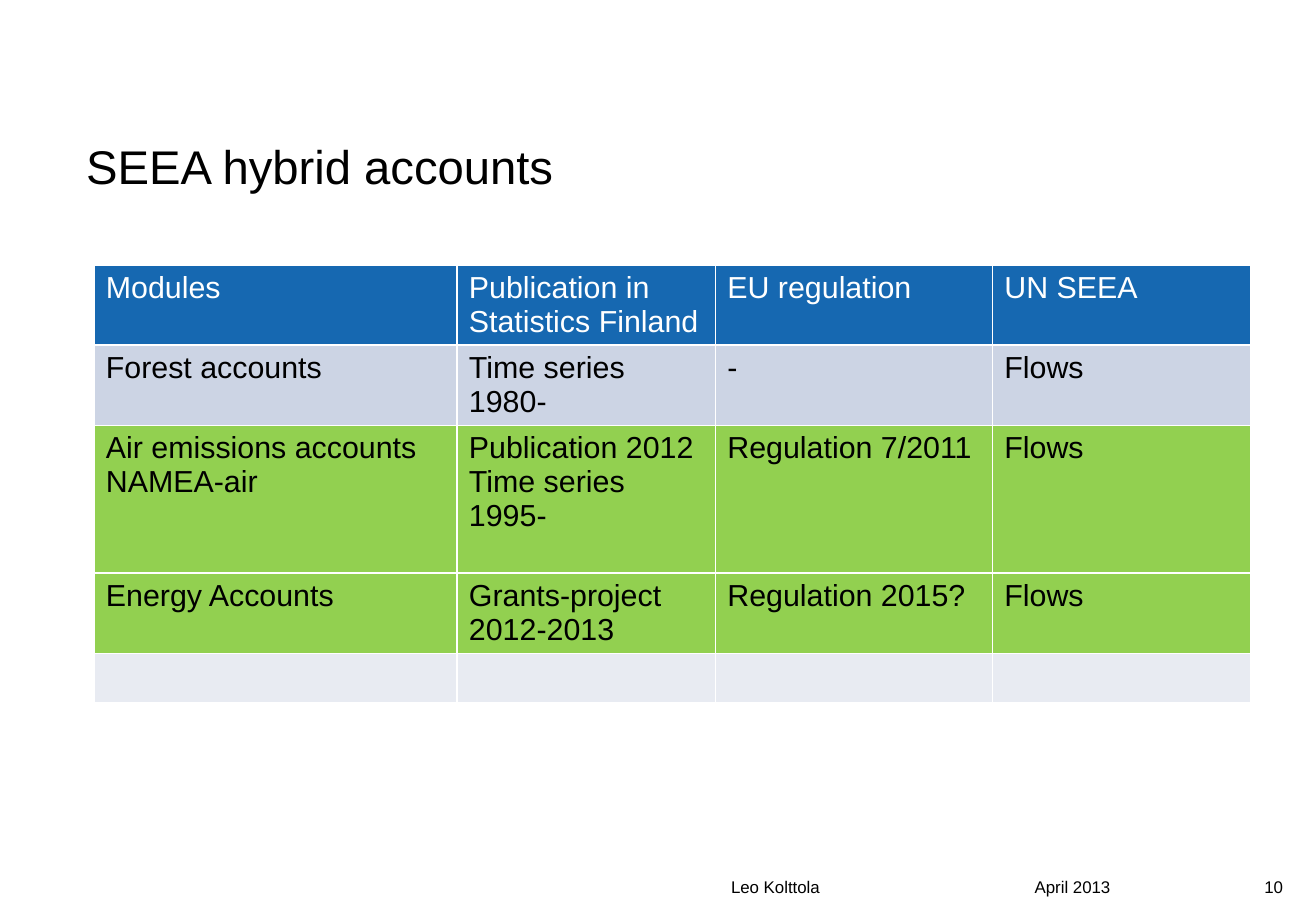
from dataclasses import dataclass

from lxml import etree
from pptx import Presentation
from pptx.dml.color import RGBColor
from pptx.enum.text import MSO_ANCHOR, PP_ALIGN
from pptx.oxml.ns import qn
from pptx.slide import Slide
from pptx.table import _Cell
from pptx.text.text import TextFrame
from pptx.util import Pt

LEFT = PP_ALIGN.LEFT
RIGHT = PP_ALIGN.RIGHT
TOP = MSO_ANCHOR.TOP
MIDDLE = MSO_ANCHOR.MIDDLE
TITLE_ONLY = 5


@dataclass(frozen=True)
class Theme:
    font: str = "Arial"
    title_size: float = 28
    table_size: float = 18
    footer_size: float = 10
    black: str = "000000"
    white: str = "FFFFFF"
    blue: str = "1668B1"
    grey: str = "CCD4E4"
    green: str = "92D050"
    pale: str = "E8EBF2"
    border: float = 1


@dataclass(frozen=True)
class Row:
    height: float
    fill: str
    color: str
    texts: tuple[str, str, str, str]


@dataclass(frozen=True)
class Footer:
    text: str
    left: float
    width: float
    align: PP_ALIGN = LEFT


THEME = Theme()
COLUMN_WIDTHS = (215.2, 153.2, 164.2, 153.2)
ROWS = (
    Row(47.5, THEME.blue, THEME.white,
        ("Modules", "Publication in Statistics Finland", "EU regulation", "UN SEEA")),
    Row(47.5, THEME.grey, THEME.black,
        ("Forest accounts", "Time series 1980-", "-", "Flows")),
    Row(87.7, THEME.green, THEME.black,
        ("Air emissions accounts \vNAMEA-air", "Publication 2012\nTime series 1995-",
         "Regulation 7/2011", "Flows")),
    Row(47.5, THEME.green, THEME.black,
        ("Energy Accounts", "Grants-project 2012-2013", "Regulation 2015?", "Flows")),
    Row(29.2, THEME.pale, THEME.black, ("", "", "", "")),
)
FOOTERS = (
    Footer("Leo Kolttola", 426.2, 174.2),
    Footer("April 2013", 606.2, 120.2),
    Footer("10", 724.3, 43.2, RIGHT),
)


def write(frame: TextFrame, text: str, size: float, color: str,
          align: PP_ALIGN = LEFT) -> None:
    frame.text = text
    frame.word_wrap = True
    for para in frame.paragraphs:
        para.alignment = align
        para.font.size = Pt(size)
        for span in para.runs:
            span.font.name = THEME.font
            span.font.size = Pt(size)
            span.font.bold = False
            span.font.color.rgb = RGBColor.from_string(color)


def add_borders(cell: _Cell) -> None:
    properties = cell._tc.get_or_add_tcPr()
    for side in ("lnL", "lnR", "lnT", "lnB"):
        line = etree.SubElement(properties, qn(f"a:{side}"), w=str(Pt(THEME.border)))
        fill = etree.SubElement(line, qn("a:solidFill"))
        etree.SubElement(fill, qn("a:srgbClr"), val=THEME.white)


def add_title(page: Slide, text: str) -> None:
    title = page.shapes.title
    title.left, title.top, title.width, title.height = Pt(43.9), Pt(77), Pt(674.6), Pt(73.4)
    frame = title.text_frame
    write(frame, text, THEME.title_size, THEME.black)
    frame.vertical_anchor = MIDDLE
    frame.margin_bottom = Pt(35)


def add_accounts_table(page: Slide) -> None:
    table = page.shapes.add_table(
        len(ROWS), len(COLUMN_WIDTHS), Pt(55.6), Pt(157), Pt(sum(COLUMN_WIDTHS)),
        Pt(sum(row.height for row in ROWS))).table
    for column, width in zip(table.columns, COLUMN_WIDTHS):
        column.width = Pt(width)
    for row_index, row in enumerate(ROWS):
        table.rows[row_index].height = Pt(row.height)
        for column_index, text in enumerate(row.texts):
            cell = table.cell(row_index, column_index)
            write(cell.text_frame, text, THEME.table_size, row.color)
            add_borders(cell)
            cell.fill.solid()
            cell.fill.fore_color.rgb = RGBColor.from_string(row.fill)


def add_footer(page: Slide, footer: Footer) -> None:
    box = page.shapes.add_textbox(Pt(footer.left), Pt(516.2), Pt(footer.width), Pt(30.2))
    write(box.text_frame, footer.text, THEME.footer_size, THEME.black, footer.align)
    box.text_frame.vertical_anchor = TOP


def main() -> None:
    deck = Presentation()
    deck.slide_width, deck.slide_height = Pt(780), Pt(540)
    page = deck.slides.add_slide(deck.slide_layouts[TITLE_ONLY])
    add_title(page, "SEEA hybrid accounts")
    add_accounts_table(page)
    for footer in FOOTERS:
        add_footer(page, footer)
    deck.save("out.pptx")


if __name__ == "__main__":
    main()
